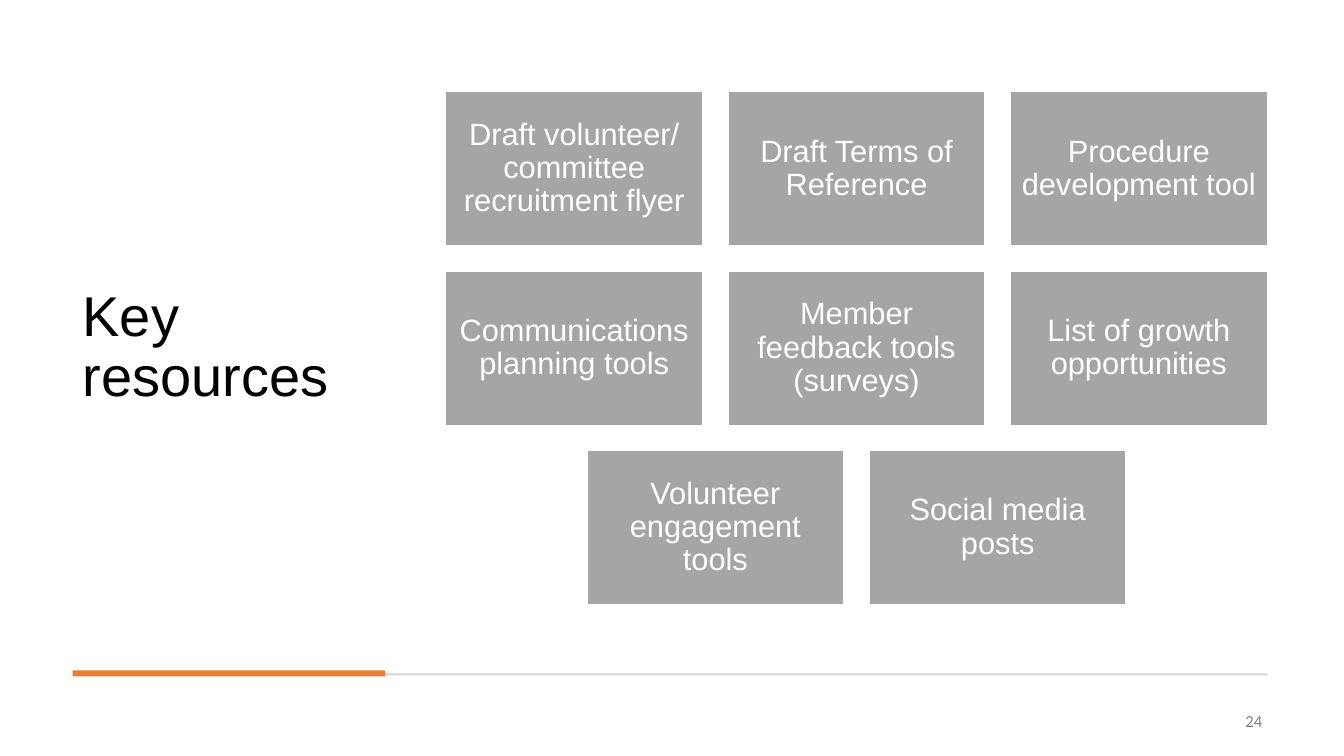
"""Build the key resources slide: a title beside a centred grid of cards."""
from dataclasses import dataclass

from pptx import Presentation
from pptx import util as u
from pptx.dml.color import RGBColor
from pptx.enum import shapes, text

TITLE = "Key resources"
PAGE = "24"
ROWS = [
    ["Draft volunteer/ committee recruitment flyer", "Draft Terms of Reference",
     "Procedure development tool"],
    ["Communications planning tools", "Member feedback tools (surveys)",
     "List of growth opportunities"],
    ["Volunteer engagement tools", "Social media posts"],
]


@dataclass(frozen=True)
class Theme:
    black: str = "000000"
    white: str = "FFFFFF"
    card: str = "A5A5A5"
    rule: str = "D5D5D5"
    accent: str = "ED7D31"
    muted: str = "808080"
    font: str = "Arial"
    page_font: str = "Calibri"
    title_pt: int = 40
    card_pt: int = 22
    page_pt: int = 12


T = Theme()
WIDTH, HEIGHT = 13.33, 7.5
LEFT, RIGHT = 0.72, 12.57
SIDE_W = 3.1
GRID_X, GRID_Y = 4.42, 0.91
CARD_W, CARD_H, GAP = 2.55, 1.53, 0.25
RULE_Y, RULE_H, ACCENT_H = 6.68, 0.02, 0.06


def box(x, y, w, h):
    return [u.Inches(v) for v in (x, y, w, h)]


def rect(s, bounds, fill, line=None):
    sp = s.shapes.add_shape(shapes.MSO_SHAPE.RECTANGLE, *box(*bounds))
    sp.shadow.inherit = False
    sp.fill.solid()
    sp.fill.fore_color.rgb = RGBColor.from_string(fill)
    if line:
        sp.line.color.rgb = RGBColor.from_string(line)
        sp.line.width = u.Pt(1)
    else:
        sp.line.fill.background()
    return sp


def write(sp, words, size, color, align, font=T.font, spacing=0.9):
    tf = sp.text_frame
    tf.word_wrap = True
    tf.auto_size = text.MSO_AUTO_SIZE.NONE
    tf.vertical_anchor = text.MSO_ANCHOR.MIDDLE
    p = tf.paragraphs[0]
    p.alignment = align
    p.line_spacing = spacing
    r = p.add_run()
    r.text = words
    r.font.size = u.Pt(size)
    r.font.name = font
    r.font.color.rgb = RGBColor.from_string(color)
    return tf


def add_cards(s):
    step_x = (RIGHT - GRID_X - CARD_W) / 2
    center = (GRID_X + RIGHT) / 2
    for i, row in enumerate(ROWS):
        start = center - ((len(row) - 1) * step_x + CARD_W) / 2
        y = GRID_Y + i * (CARD_H + GAP)
        for j, words in enumerate(row):
            sp = rect(s, (start + j * step_x, y, CARD_W, CARD_H), T.card, T.white)
            tf = write(sp, words, T.card_pt, T.white, text.PP_ALIGN.CENTER)
            tf.margin_left = tf.margin_right = u.Inches(0.09)
            tf.margin_top = tf.margin_bottom = u.Inches(0.09)


def main():
    prs = Presentation()
    prs.slide_width, prs.slide_height = u.Inches(WIDTH), u.Inches(HEIGHT)
    s = prs.slides.add_slide(prs.slide_layouts[5])

    title = s.shapes.title
    title.left, title.top, title.width, title.height = box(LEFT, 0.47, SIDE_W, 5.97)
    write(title, TITLE, T.title_pt, T.black, text.PP_ALIGN.LEFT)

    rect(s, (LEFT, RULE_Y, RIGHT - LEFT, RULE_H), T.rule)
    rect(s, (LEFT, RULE_Y - ACCENT_H / 2, SIDE_W, ACCENT_H), T.accent)

    page = s.shapes.add_textbox(*box(9.62, 6.95, 3, 0.4))
    write(page, PAGE, T.page_pt, T.muted, text.PP_ALIGN.RIGHT, T.page_font, 1.0)

    add_cards(s)
    prs.save("out.pptx")


if __name__ == "__main__":
    main()
